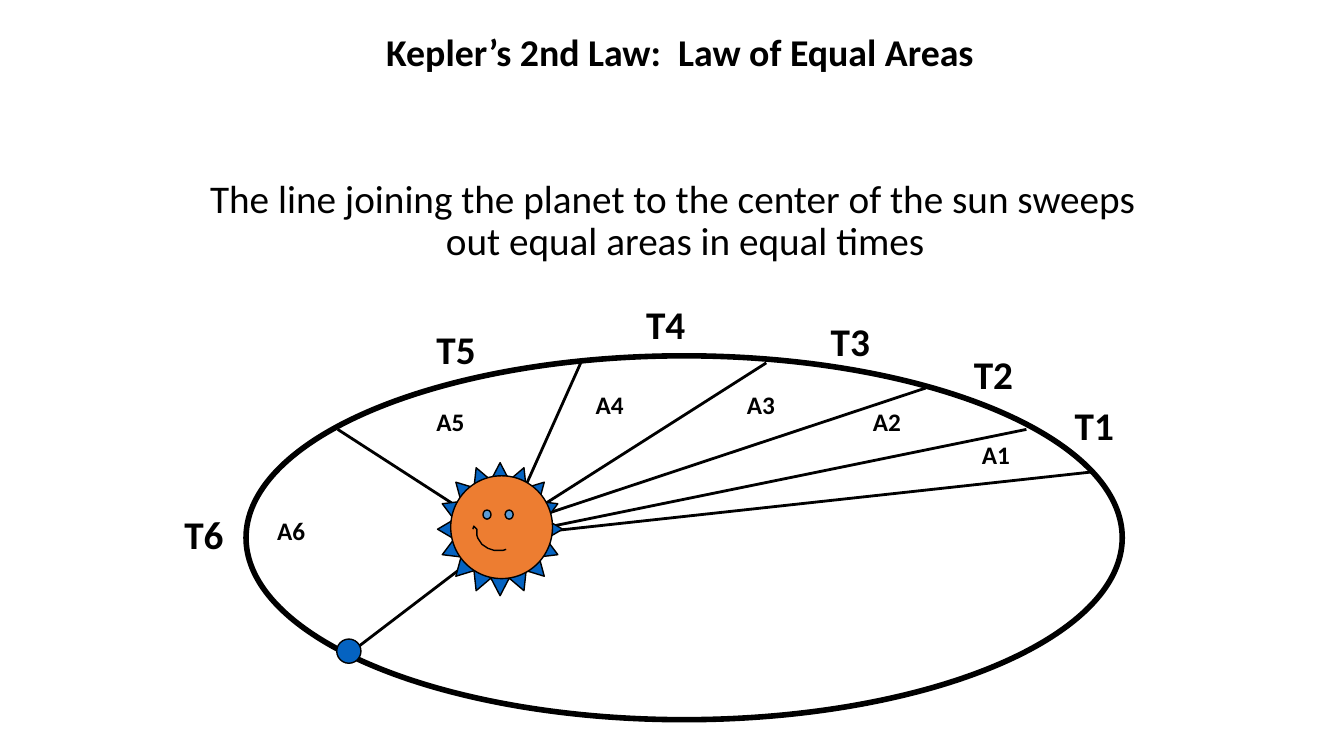
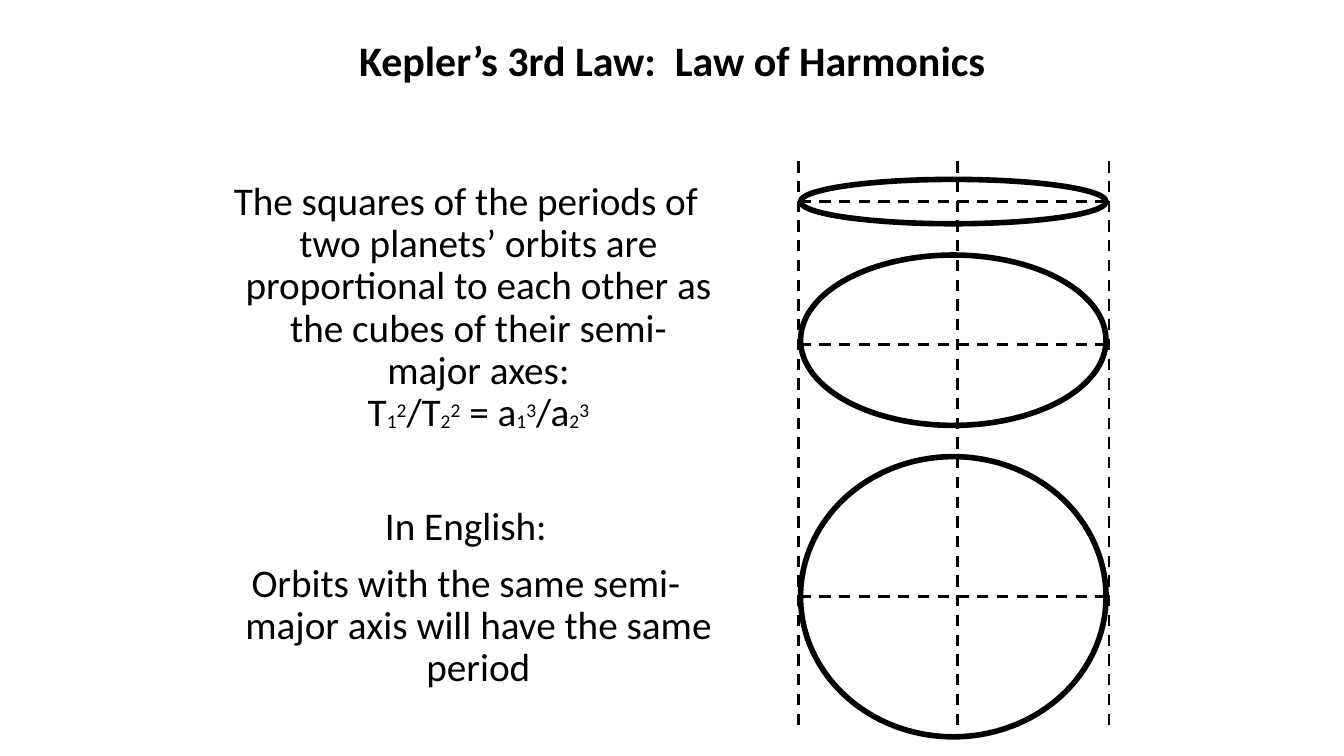
from lxml import etree
from pptx import Presentation
from pptx.dml.color import RGBColor
from pptx.enum.dml import MSO_LINE
from pptx.enum.shapes import MSO_CONNECTOR, MSO_SHAPE
from pptx.enum.text import MSO_ANCHOR, MSO_AUTO_SIZE, PP_ALIGN
from pptx.oxml.ns import qn
from pptx.util import Inches, Pt

OVAL, STAR = MSO_SHAPE.OVAL, MSO_SHAPE.STAR_16_POINT
STRAIGHT, DASH = MSO_CONNECTOR.STRAIGHT, MSO_LINE.DASH
CENTER, MIDDLE = PP_ALIGN.CENTER, MSO_ANCHOR.MIDDLE
NO_FIT = MSO_AUTO_SIZE.NONE

FONT = "Calibri"
COLORS = {"ink": "000000", "paper": "FFFFFF", "blue": "0563C1",
          "sun": "ED7D31", "eye": "5B9BD5"}
ORBIT_PT, RAY_PT, THIN_PT = 4, 2, 1
BODY_PT, INDEX_PT = 28, 24
SUB, SUP = -6000, 28000

HUB = (4.99, 5.32)
RAYS = [((3.35, 4.26), HUB), ((3.43, 6.51), HUB), ((5.76, 3.6), HUB),
        ((7.6, 3.6), (4.9, 5.32)), ((9.18, 3.85), (4.99, 5.24)),
        ((10.18, 4.26), HUB), ((10.85, 4.68), HUB)]
TIMES = [(10.56, 3.93), (9.56, 3.43), (8.14, 3.1),
         (6.31, 2.93), (4.23, 3.18), (1.73, 5.01)]
AREAS = [(9.64, 4.31), (8.56, 3.98), (7.31, 3.81),
         (5.81, 3.81), (4.23, 3.98), (2.65, 5.06)]
SMILE = [(4.69, 5.25), (4.7, 5.22), (4.73, 5.25), (4.73, 5.31), (4.74, 5.34),
         (4.76, 5.37), (4.78, 5.4), (4.81, 5.42), (4.84, 5.44), (4.87, 5.45),
         (4.9, 5.46), (4.99, 5.46), (5.02, 5.45)]

FORMULA = [("T", 0), ("1", SUB), ("2", SUP), ("/T", 0), ("2", SUB), ("2", SUP),
           (" = a", 0), ("1", SUB), ("3", SUP), ("/a", 0), ("2", SUB), ("3", SUP)]
# Top, height and axis height of each orbit
ORBITS = [(1.78, 0.44, 2), (2.53, 1.69, 3.42), (4.53, 2.78, 5.92)]
GUIDES = [7.92, 9.5, 11]


def color(name):
    return RGBColor.from_string(COLORS[name])


def style(run, size, bold=False):
    font = run.font
    font.name, font.size, font.bold = FONT, Pt(size), bold
    font.color.rgb = color("ink")


def add_slide(prs, title, box, size):
    slide = prs.slides.add_slide(prs.slide_layouts[5])
    head = slide.shapes.title
    head.left, head.top, head.width, head.height = map(Inches, box)
    frame = head.text_frame
    frame.text = title
    frame.auto_size, frame.vertical_anchor = NO_FIT, MIDDLE
    para = frame.paragraphs[0]
    para.alignment, para.line_spacing = CENTER, 0.9
    style(para.runs[0], size, True)
    return slide


def add_body(slide, box, items):
    """Add centred hanging paragraphs from (text, space before) pairs."""
    frame = slide.shapes.add_textbox(*map(Inches, box)).text_frame
    frame.word_wrap = True
    for i, (text, gap) in enumerate(items):
        para = frame.add_paragraph() if i else frame.paragraphs[0]
        para.text = text
        para.alignment, para.line_spacing = CENTER, 0.9
        para.space_before = Pt(gap)
        props = para._p.get_or_add_pPr()
        props.set("marL", str(Inches(0.25)))
        props.set("indent", str(Inches(-0.25)))
        style(para.runs[0], BODY_PT)
    return frame


def add_terms(para, terms):
    """Append a formula of (text, baseline shift) terms on a new line."""
    para.add_line_break()
    for text, shift in terms:
        run = para.add_run()
        run.text = text
        style(run, INDEX_PT if shift else BODY_PT)
        if shift:
            run.font._element.set("baseline", str(shift))


def add_label(slide, text, spot, box, size):
    frame = slide.shapes.add_textbox(*map(Inches, spot + box)).text_frame
    frame.word_wrap = False
    frame.text = text
    style(frame.paragraphs[0].runs[0], size, True)


def paint(shape, fill, width):
    shape.shadow.inherit = False
    if fill:
        shape.fill.solid()
        shape.fill.fore_color.rgb = color(fill)
    else:
        shape.fill.background()
    shape.line.color.rgb = color("ink")
    shape.line.width = Pt(width)


def add_shape(slide, kind, box, fill=None, width=THIN_PT):
    shape = slide.shapes.add_shape(kind, *map(Inches, box))
    paint(shape, fill, width)
    return shape


def add_line(slide, start, end, dash=None):
    line = slide.shapes.add_connector(STRAIGHT, *map(Inches, start + end))
    line.line.color.rgb = color("ink")
    line.line.width = Pt(RAY_PT)
    if dash:
        line.line.dash_style = dash
    etree.SubElement(line._element.spPr, qn("a:effectLst"))


def add_sun(slide):
    star = add_shape(slide, STAR, (4.34, 4.59, 1.24, 1.32), "blue")
    star.adjustments[0] = 0.375
    add_shape(slide, OVAL, (4.47, 4.72, 1.01, 1.02), "sun")
    for x in (4.79, 5.01):
        add_shape(slide, OVAL, (x, 5.06, 0.08, 0.09), "eye")
    dots = [(Inches(x), Inches(y)) for x, y in SMILE]
    pen = slide.shapes.build_freeform(*dots[0])
    pen.add_line_segments(dots[1:], close=False)
    paint(pen.convert_to_shape(), None, THIN_PT)


def build_areas(prs):
    slide = add_slide(prs, "Kepler’s 2nd Law:  Law of Equal Areas",
                      (2.58, 0.33, 8.33, 0.42), 27)
    add_body(slide, (1.92, 1.73, 9.5, 1.19), [
        ("The line joining the planet to the center of the sun sweeps "
         "out equal areas in equal times", 10)])
    add_shape(slide, OVAL, (2.44, 3.53, 8.69, 3.61), "paper", ORBIT_PT)
    for start, end in RAYS:
        add_line(slide, start, end)
    add_sun(slide)
    for i, (time, area) in enumerate(zip(TIMES, AREAS), 1):
        add_label(slide, f"T{i}", time, (0.59, 0.57), 28)
        add_label(slide, f"A{i}", area, (0.48, 0.4), 18)
    add_shape(slide, OVAL, (3.34, 6.34, 0.24, 0.24), "blue")


def build_periods(prs):
    slide = add_slide(prs, "Kepler’s 3rd Law:  Law of Harmonics",
                      (2.42, 0.25, 8.5, 0.75), 30)
    frame = add_body(slide, (2.08, 1.75, 5.08, 5.5), [
        ("The squares of the periods of two planets’ orbits are proportional "
         "to each other as the cubes of their semi-major axes:", 10),
        ("In English:", 51),
        ("Orbits with the same semi-major axis will have the same period", 10)])
    add_terms(frame.paragraphs[0], FORMULA)
    for x in GUIDES:
        add_line(slide, (x, 1.6), (x, 7.24), DASH)
    for top, height, axis in ORBITS:
        add_shape(slide, OVAL, (7.94, top, 3.03, height), width=ORBIT_PT)
        add_line(slide, (7.93, axis), (10.99, axis), DASH)


def main():
    prs = Presentation()
    prs.slide_width, prs.slide_height = Inches(13.33), Inches(7.5)
    build_areas(prs)
    build_periods(prs)
    prs.save("out.pptx")


if __name__ == "__main__":
    main()
